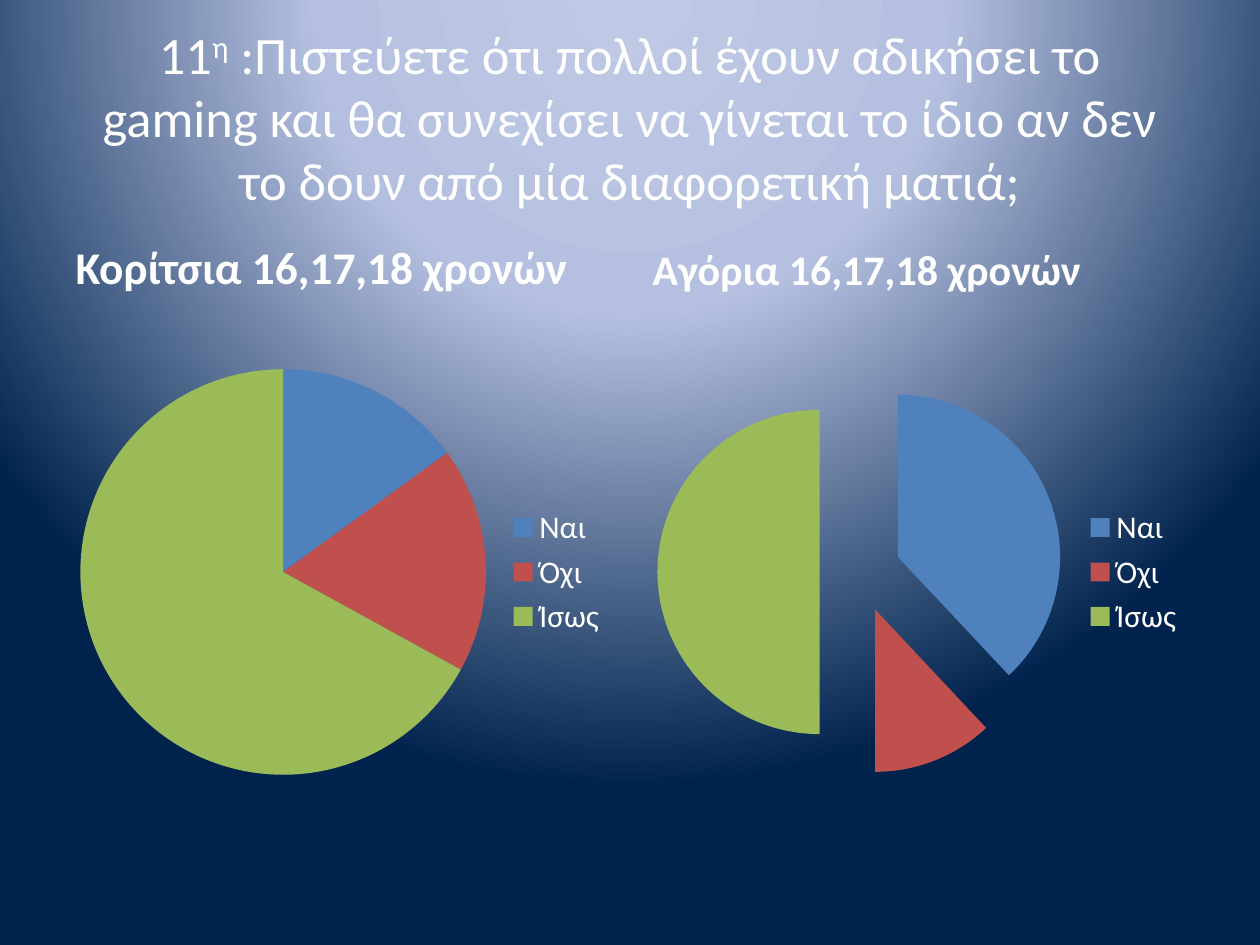
"""Build the survey slide that compares girls' and boys' answers in two pie charts."""
from lxml import etree
from pptx import Presentation
from pptx import util as u
from pptx.chart.data import CategoryChartData
from pptx.dml.color import RGBColor
from pptx.enum import chart as ch, text
from pptx.oxml import parse_xml
from pptx.oxml.ns import nsdecls, qn


def color(value):
    return RGBColor.from_string(value)


def style(font, size, bold=False):
    font.name = "Calibri"
    font.size = u.Pt(size)
    font.bold = bold
    font.color.rgb = color("FFFFFF")


deck = Presentation()
deck.slide_width, deck.slide_height = u.Inches(10), u.Inches(7.5)
page = deck.slides.add_slide(deck.slide_layouts.get_by_name("Comparison"))

page.background.fill.solid()
solid = page.element.find(".//" + qn("p:bgPr")).find(qn("a:solidFill"))
stops = "".join(
    f'<a:gs pos="{position * 1000}"><a:srgbClr val="{value}"/></a:gs>'
    for position, value in [(0, "BFC9E5"), (40, "B5C0E0"), (100, "00234D")]
)
solid.getparent().replace(solid, parse_xml(
    f'<a:gradFill rotWithShape="1" {nsdecls("a")}><a:gsLst>{stops}</a:gsLst>'
    '<a:path path="circle"><a:fillToRect l="50000" t="-80000" r="50000" b="180000"/>'
    '</a:path></a:gradFill>'
))

title = page.shapes.title
title.left, title.top = u.Inches(0.5), u.Inches(0.3)
title.width, title.height = u.Inches(9), u.Inches(1.25)
title.text_frame.auto_size = text.MSO_AUTO_SIZE.NONE
title.text_frame.vertical_anchor = text.MSO_ANCHOR.MIDDLE
title.text_frame.margin_left = title.text_frame.margin_right = u.Inches(0.15)
para = title.text_frame.paragraphs[0]
para.alignment = text.PP_ALIGN.CENTER
style(para.font, 30)
question = (" :Πιστεύετε ότι πολλοί έχουν αδικήσει το gaming και θα συνεχίσει "
            "να γίνεται το ίδιο αν δεν το δουν από μία διαφορετική ματιά;")
for wording, baseline in [("11", 0), ("η", 30), (question, 0)]:
    span = para.add_run()
    span.text = wording
    if baseline:
        span.font._element.set("baseline", str(baseline * 1000))

answers = ["Ναι", "Όχι", "Ίσως"]
slice_colors = ["4F81BD", "C0504D", "9BBB59"]
groups = [
    (0.5, 1, "Κορίτσια 16,17,18 χρονών", 25.9, [15, 18, 67], 0),
    (5.08, 3, "Αγόρια 16,17,18 χρονών", 24, [38, 12, 50], 25),
]
for left, index, heading, size, values, explosion in groups:
    box = page.placeholders[index]
    box.left, box.top = u.Inches(left), u.Inches(1.68)
    box.width, box.height = u.Inches(4.42), u.Inches(0.7)
    box.text_frame.auto_size = text.MSO_AUTO_SIZE.NONE
    box.text_frame.vertical_anchor = text.MSO_ANCHOR.BOTTOM
    box.text_frame.text = heading
    style(box.text_frame.paragraphs[0].font, size, bold=True)

    empty = page.placeholders[index + 1].element
    empty.getparent().remove(empty)

    data = CategoryChartData()
    data.categories = answers
    data.add_series("Series 1", values)
    pie = page.shapes.add_chart(
        ch.XL_CHART_TYPE.PIE, u.Inches(left), u.Inches(2.38),
        u.Inches(4.42), u.Inches(4.32), data,
    ).chart
    style(pie.font, 18)
    pie.has_title = False
    pie.has_legend = True
    pie.legend.position = ch.XL_LEGEND_POSITION.RIGHT
    pie.legend.include_in_layout = False
    series = pie.plots[0].series[0]
    if explosion:
        offset = etree.Element(qn("c:explosion"), val=str(explosion))
        series._element.find(qn("c:tx")).addnext(offset)
    for number, value in enumerate(slice_colors):
        fill = series.points[number].format.fill
        fill.solid()
        fill.fore_color.rgb = color(value)

deck.save("out.pptx")
